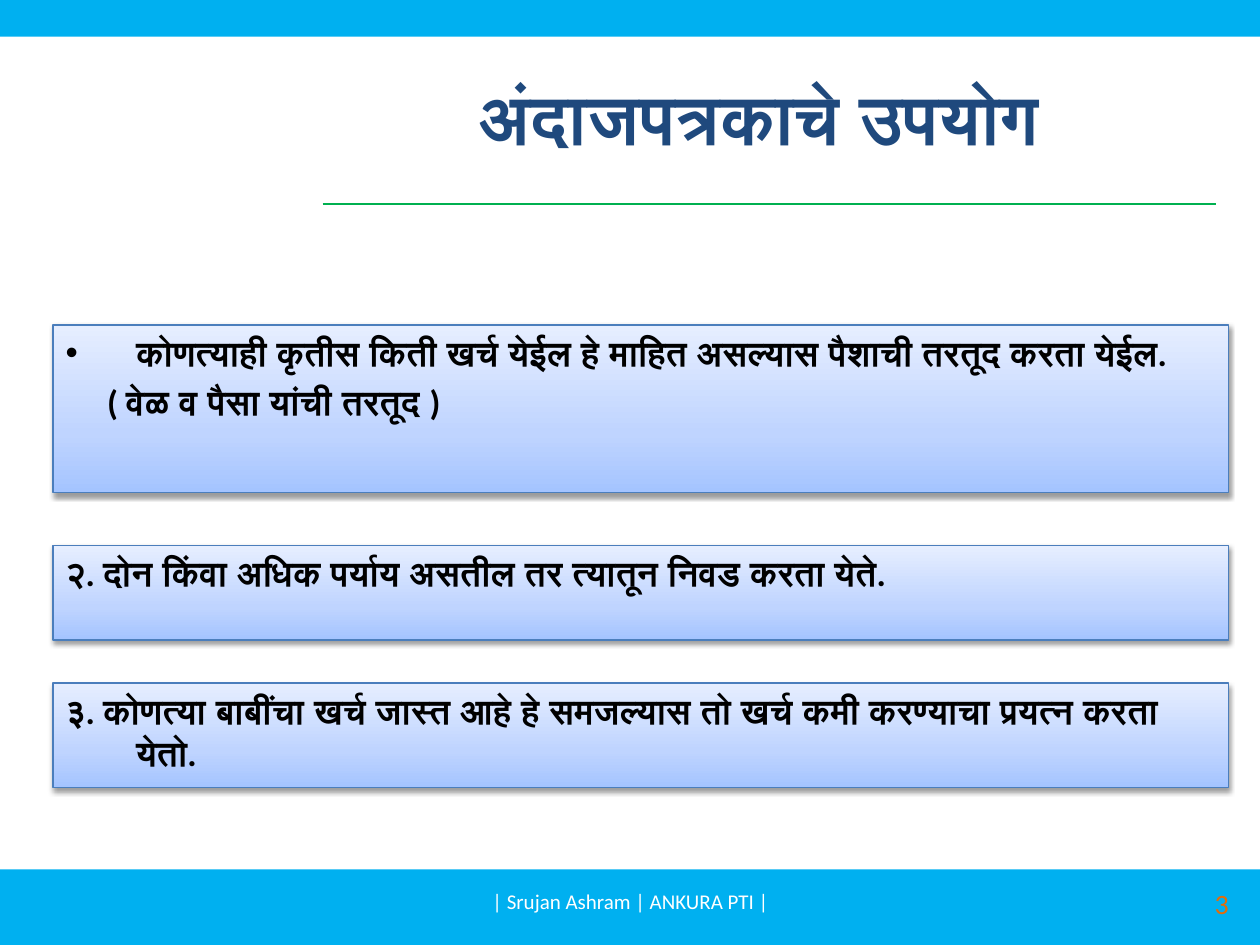
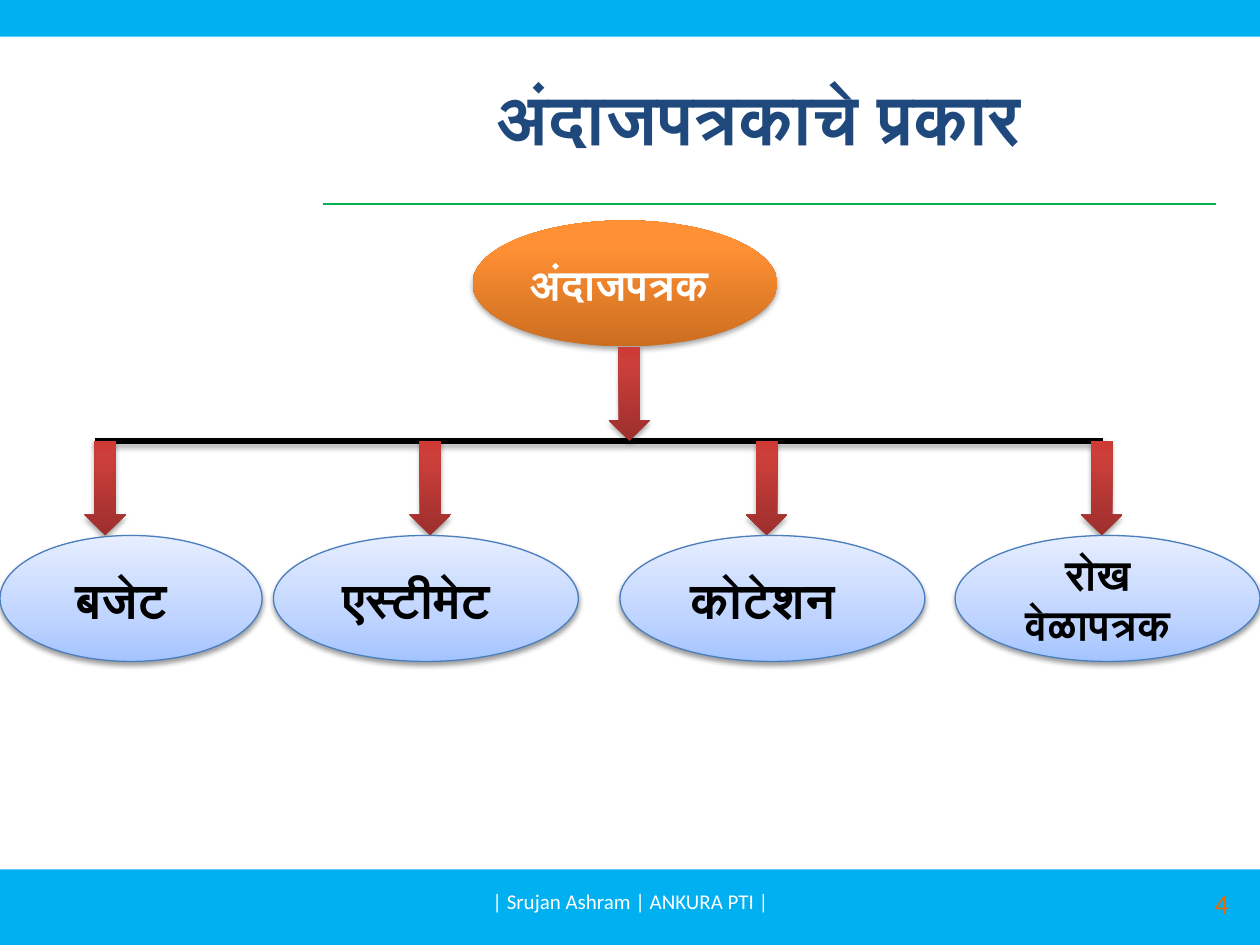
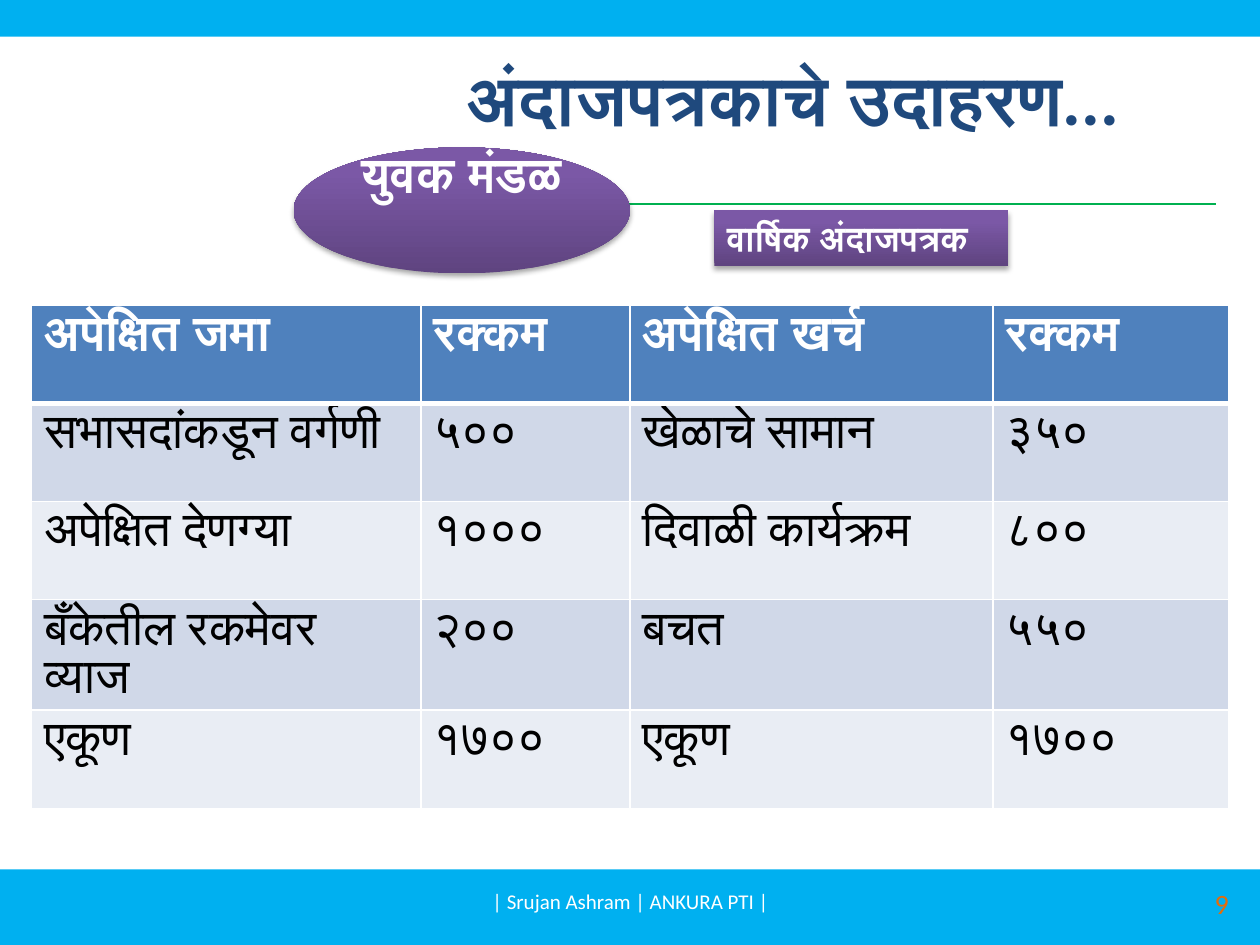
from dataclasses import dataclass

from lxml import etree
from pptx import Presentation
from pptx import util as u
from pptx.dml.color import RGBColor
from pptx.enum import shapes, text
from pptx.oxml.ns import qn


@dataclass(frozen=True)
class Theme:
    font: str = "Calibri"
    band: str = "00B0F0"
    rule: str = "00B050"
    white: str = "FFFFFF"
    black: str = "000000"
    title: str = "1F497D"
    number: str = "E46C0A"
    edge: str = "4B7EBC"
    head: str = "4F81BD"
    rows: tuple = ("D0D8E8", "E9EDF4")
    # Gradient stops: percent and colour, from the bottom up
    blue: tuple = ((0, "A4C4FF"), (35, "BFD4FF"), (100, "E6EEFF"))
    orange: tuple = ((0, "CC6E20"), (80, "FF9034"), (100, "FF9136"))
    red: tuple = ((0, "9C2F2D"), (80, "CB3E3A"), (100, "CE3B37"))
    purple: tuple = ((0, "5F4480"), (80, "7B58A6"), (100, "7C57A8"))
    # Shadows: opacity in percent, distance in points
    soft_shadow: tuple = (38, 1.6)
    deep_shadow: tuple = (35, 1.8)
    # Type sizes
    title_size: int = 40
    large: int = 28
    medium: int = 24
    body: int = 20
    number_size: int = 16
    footer: int = 12


FOOTER = "| Srujan Ashram | ANKURA PTI |"
ALIGN = text.PP_ALIGN
ANCHOR = text.MSO_ANCHOR
PRESET = shapes.MSO_SHAPE


def child(parent, tag, **values):
    return etree.SubElement(parent, qn(tag), {key: str(value) for key, value in values.items()})


def solid_line(parent, tag, color, points):
    line = child(parent, tag, w=u.Pt(points))
    child(child(line, "a:solidFill"), "a:srgbClr", val=color)
    return line


class SlideBuilder:
    """Holds the deck, its theme and the slide being built."""

    def __init__(self, theme):
        self.theme = theme
        self.deck = Presentation()
        self.deck.slide_width, self.deck.slide_height = u.Inches(10), u.Inches(7.5)
        self.page = None

    # --- formatting ---
    def format_font(self, font, size, color, bold=False):
        values = {"name": self.theme.font, "size": u.Pt(size), "bold": bold}
        for name, value in values.items():
            setattr(font, name, value)
        font.color.rgb = RGBColor.from_string(color)

    def set_text(self, shape, words, size, color, bold=False, align=ALIGN.CENTER,
                 anchor=ANCHOR.MIDDLE, **margins):
        frame = shape.text_frame
        values = {"word_wrap": True, "auto_size": text.MSO_AUTO_SIZE.NONE,
                  "vertical_anchor": anchor}
        values.update({f"margin_{side}": u.Inches(gap) for side, gap in margins.items()})
        for name, value in values.items():
            setattr(frame, name, value)
        para = frame.paragraphs[0]
        para.alignment = align
        span = para.add_run()
        span.text = words
        self.format_font(span.font, size, color, bold)
        return span

    def place(self, shape, at):
        for name, value in zip(("left", "top", "width", "height"), at):
            setattr(shape, name, u.Inches(value))

    def shade(self, shape, stops):
        shape.fill.gradient()
        shape.fill.gradient_angle = 90
        stop_list = shape._element.spPr.find(qn("a:gradFill")).find(qn("a:gsLst"))
        for stop in list(stop_list):
            stop_list.remove(stop)
        for position, color in stops:
            child(child(stop_list, "a:gs", pos=position * 1000), "a:srgbClr", val=color)

    def cast_shadow(self, effects, opacity, distance):
        shadow = child(effects, "a:outerShdw", blurRad=u.Pt(3.1), dist=u.Pt(distance),
                       dir=5400000, rotWithShape=0)
        color = child(shadow, "a:srgbClr", val=self.theme.black)
        child(color, "a:alpha", val=opacity * 1000)

    def decorate(self, shape, stops):
        """Gradient and shadow; the blue style also has an edge."""
        theme = self.theme
        self.shade(shape, stops)
        edged = stops is theme.blue
        if edged:
            shape.line.color.rgb = RGBColor.from_string(theme.edge)
            shape.line.width = u.Pt(0.75)
        else:
            shape.line.fill.background()
        shape.shadow.inherit = False
        effects = shape._element.spPr.find(qn("a:effectLst"))
        self.cast_shadow(effects, *(theme.soft_shadow if edged else theme.deep_shadow))

    # --- elements ---
    def band(self, top, height):
        box = self.page.shapes.add_shape(PRESET.RECTANGLE, 0, u.Inches(top),
                                         self.deck.slide_width, u.Inches(height))
        box.fill.solid()
        box.fill.fore_color.rgb = RGBColor.from_string(self.theme.band)
        box.line.fill.background()
        box.shadow.inherit = False

    def line(self, left, right, y, color, points, shadow=None):
        rule = self.page.shapes.add_connector(
            shapes.MSO_CONNECTOR.STRAIGHT, *map(u.Inches, (left, y, right, y)))
        rule.line.color.rgb = RGBColor.from_string(color)
        rule.line.width = u.Pt(points)
        effects = child(rule._element.spPr, "a:effectLst")
        if shadow:
            self.cast_shadow(effects, *shadow)

    def label(self, at, words, size, color, align=ALIGN.CENTER):
        box = self.page.shapes.add_textbox(*map(u.Inches, at))
        return self.set_text(box, words, size, color, align=align)

    def shape(self, preset, at, stops):
        box = self.page.shapes.add_shape(preset, *map(u.Inches, at))
        self.decorate(box, stops)
        return box

    def start(self, layout, title, number, title_at=(2.56, 0.3, 7.09, 1.25), title_right=0.26):
        """New slide with title, bands, rule, footer and number."""
        theme = self.theme
        self.page = self.deck.slides.add_slide(self.deck.slide_layouts.get_by_name(layout))
        self.band(6.9, 0.6)
        self.line(2.56, 9.65, 1.62, theme.rule, 0.75)
        self.band(0, 0.29)
        heading = self.page.shapes.title
        self.place(heading, title_at)
        self.set_text(heading, title, theme.title_size, theme.title, True, right=title_right)
        self.label((3.42, 6.95, 3.17, 0.4), FOOTER, theme.footer, theme.white)
        span = self.label((7.52, 6.97, 2.33, 0.4), number, theme.number_size,
                          theme.number, ALIGN.RIGHT)
        run_format = span._r.get_or_add_rPr()
        run_format.insert(0, solid_line(run_format, "a:ln", theme.white, 1.45))

    def list_box(self, holder, top, height, items):
        """Body placeholder; items are (words, bullet, left margin, first-line indent)."""
        theme = self.theme
        self.place(holder, (0.42, top, 9.33, height))
        self.decorate(holder, theme.blue)
        frame = holder.text_frame
        frame.auto_size = text.MSO_AUTO_SIZE.NONE
        frame.vertical_anchor = ANCHOR.TOP
        for index, (words, bullet, margin, indent) in enumerate(items):
            para = frame.add_paragraph() if index else frame.paragraphs[0]
            layout = para._p.get_or_add_pPr()
            layout.set("marL", str(u.Inches(margin)))
            layout.set("indent", str(u.Inches(indent)))
            if bullet:
                child(layout, "a:buFont", typeface="Arial")
                child(layout, "a:buChar", char=bullet)
            else:
                child(layout, "a:buNone")
            para.space_before = u.Pt(4 if index else 0)
            span = para.add_run()
            span.text = words
            self.format_font(span.font, theme.body, theme.black, True)

    def table(self, left, top, widths, row_height, rows):
        theme = self.theme
        grid = self.page.shapes.add_table(
            len(rows), len(widths), u.Inches(left), u.Inches(top),
            u.Inches(sum(widths)), u.Inches(row_height * len(rows))).table
        for column, width in zip(grid.columns, widths):
            column.width = u.Inches(width)
        for r, row in enumerate(rows):
            grid.rows[r].height = u.Inches(row_height)
            fill = theme.rows[(r - 1) % 2] if r else theme.head
            for c, words in enumerate(row):
                cell = grid.cell(r, c)
                cell.fill.solid()
                cell.fill.fore_color.rgb = RGBColor.from_string(fill)
                span = cell.text_frame.paragraphs[0].add_run()
                span.text = words
                self.format_font(span.font, theme.large, theme.black if r else theme.white, not r)
                self.cell_borders(cell, 3 if r == 1 else 1, 3 if r == 0 else 1)

    def cell_borders(self, cell, top, bottom):
        layout = cell._tc.get_or_add_tcPr()
        for index, (side, points) in enumerate(zip("LRTB", (1, 1, top, bottom))):
            layout.insert(index, solid_line(layout, f"a:ln{side}", self.theme.white, points))


# --- slides ---
def build_uses(slide):
    slide.start("Comparison", "अंदाजपत्रकाचे उपयोग", "3")
    hanging = (0.56, -0.56)
    boxes = [
        (2.58, 1.33, [
            ("कोणत्याही कृतीस किती खर्च येईल हे माहित असल्यास पैशाची तरतूद करता येईल.", "•", *hanging),
            ("( वेळ व पैसा यांची तरतूद )", None, 0.33, 0)]),
        (4.33, 0.75, [
            ("२. दोन किंवा अधिक पर्याय असतील तर त्यातून निवड करता येते.", None, *hanging)]),
        (5.42, 0.83, [
            ("३. कोणत्या बाबींचा खर्च जास्त आहे हे समजल्यास तो खर्च कमी करण्याचा प्रयत्न करता येतो.",
             None, *hanging)]),
    ]
    holders = [holder for holder in slide.page.placeholders
               if holder.placeholder_format.idx > 0]
    for holder, box in zip(holders, boxes):
        slide.list_box(holder, *box)
    for unused in holders[len(boxes):]:
        unused._element.getparent().remove(unused._element)


def build_types(slide):
    theme = slide.theme
    slide.start("Title Only", "अंदाजपत्रकाचे प्रकार", "4")
    root = slide.shape(PRESET.OVAL, (3.75, 1.75, 2.42, 1), theme.orange)
    slide.set_text(root, "अंदाजपत्रक", theme.medium, theme.white, True, right=0.18)
    slide.line(0.75, 8.75, 3.5, theme.black, 3, theme.deep_shadow)
    # Arrow left, oval left, oval width, words, type size
    branches = [
        (0.67, 0, 2.08, "बजेट", theme.large),
        (3.25, 2.17, 2.42, "एस्टीमेट", theme.large),
        (5.92, 4.92, 2.42, "कोटेशन", theme.large),
        (8.58, 7.58, 2.42, "रोख वेळापत्रक", theme.medium),
    ]
    arrows = [(branch[0], 3.5) for branch in branches] + [(4.83, 2.75)]
    for left, top in arrows:
        slide.shape(PRESET.DOWN_ARROW, (left, top, 0.33, 0.75), theme.red)
    for _, left, width, words, size in branches:
        oval = slide.shape(PRESET.OVAL, (left, 4.25, width, 1), theme.blue)
        slide.set_text(oval, words, size, theme.black, True, right=0.25)


def build_example(slide):
    theme = slide.theme
    slide.start("Title Only", "अंदाजपत्रकाचे उदाहरण...", "9", (2.75, 0.42, 7.09, 0.7), 0.1)
    group = slide.shape(PRESET.OVAL, (2.33, 1.17, 2.67, 1), theme.purple)
    slide.set_text(group, "युवक मंडळ", theme.large, theme.white, True, top=0, bottom=0.6)
    period = slide.shape(PRESET.RECTANGLE, (5.67, 1.67, 2.33, 0.44), theme.purple)
    slide.set_text(period, "वार्षिक अंदाजपत्रक", theme.body, theme.white, True,
                   ALIGN.LEFT, ANCHOR.TOP)
    slide.table(0.25, 2.42, (3.09, 1.66, 2.88, 1.87), 0.78, [
        ("अपेक्षित जमा", "रक्कम", "अपेक्षित खर्च", "रक्कम"),
        ("सभासदांकडून वर्गणी", "५००", "खेळाचे सामान", "३५०"),
        ("अपेक्षित देणग्या", "१०००", "दिवाळी कार्यक्रम", "८००"),
        ("बँकेतील रकमेवर व्याज", "२००", "बचत", "५५०"),
        ("एकूण", "१७००", "एकूण", "१७००"),
    ])


def main():
    slide = SlideBuilder(Theme())
    for build in (build_uses, build_types, build_example):
        build(slide)
    slide.deck.save("out.pptx")


if __name__ == "__main__":
    main()
